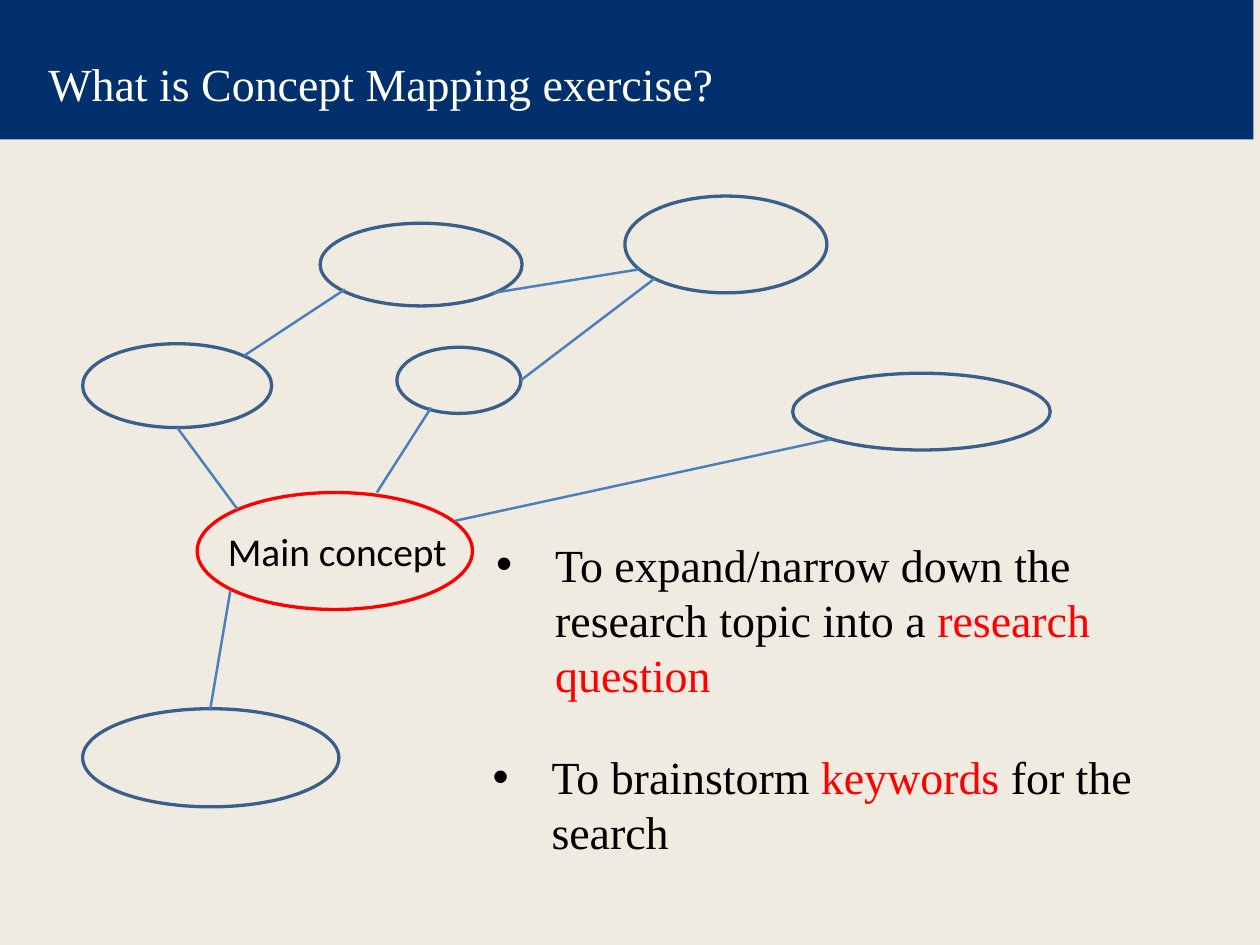
"""Build a slide that explains the concept mapping exercise."""
from dataclasses import dataclass

from lxml import etree
from pptx import Presentation
from pptx.dml.color import RGBColor
from pptx.enum.shapes import MSO_CONNECTOR, MSO_SHAPE
from pptx.enum.text import MSO_ANCHOR, MSO_AUTO_SIZE, PP_ALIGN
from pptx.oxml.ns import qn
from pptx.util import Pt

OVAL = MSO_SHAPE.OVAL
RECT = MSO_SHAPE.RECTANGLE
LINE = MSO_CONNECTOR.STRAIGHT
LEFT = PP_ALIGN.LEFT
TOP = MSO_ANCHOR.TOP
FIXED = MSO_AUTO_SIZE.NONE


@dataclass(frozen=True)
class Theme:
    paper: str = "EFEBE0"
    navy: str = "02306D"
    white: str = "FFFFFF"
    black: str = "000000"
    red: str = "FF0000"
    rim: str = "3A5F8C"
    link: str = "4B7EBC"
    serif: str = "Times New Roman"
    sans: str = "Calibri"
    big: float = 28
    label: float = 24
    indent: float = 36


THEME = Theme()

MAIN = (120.2, 300.2, 167.8, 71.3)
IDEAS = [
    (50.4, 209.5, 115.2, 51.1),
    (195.1, 136.1, 123.1, 50.4),
    (50.4, 432, 156.2, 59.8),
    (241.9, 211.7, 75.6, 40.3),
    (380.9, 119.5, 123.1, 59),
    (483.1, 227.5, 157, 46.8),
]
LINKS = [
    (108, 260.6, 144.7, 310.3),
    (210.2, 176.4, 149, 216.7),
    (140.4, 360, 128.2, 432),
    (262.8, 248.4, 229.7, 300.2),
    (389.5, 164.2, 300.2, 178.6),
    (398.9, 169.9, 317.5, 231.8),
    (506.2, 267.8, 277.2, 317.5),
]
POINTS = [
    ((302.4, 326.9, 442.8, 101.5),
     [("To expand/narrow down the research topic into a ", THEME.black),
      ("research question", THEME.red)]),
    ((300.2, 456.5, 426.2, 67.7),
     [("To brainstorm ", THEME.black),
      ("keywords", THEME.red),
      (" for the search", THEME.black)]),
]


def tint(code):
    """Turn a hex code into a colour."""
    return RGBColor.from_string(code)


def style(para, face, size, color=None):
    """Set the font of a paragraph."""
    para.font.name = face
    para.font.size = Pt(size)
    if color:
        para.font.color.rgb = tint(color)


def place(holder, box):
    """Move a placeholder, clear its insets and return its first paragraph."""
    holder.left, holder.top, holder.width, holder.height = map(Pt, box)
    frame = holder.text_frame
    frame.margin_left = frame.margin_right = 0
    frame.margin_top = frame.margin_bottom = 0
    frame.vertical_anchor = TOP
    frame.auto_size = FIXED
    frame.word_wrap = True
    para = frame.paragraphs[0]
    para.alignment = LEFT
    para.space_before = Pt(0)
    return para


def add_band(slide, box):
    """Put the navy band behind the title."""
    band = slide.shapes.add_shape(RECT, *map(Pt, box))
    band.shadow.inherit = False
    band.fill.solid()
    band.fill.fore_color.rgb = tint(THEME.navy)
    band.line.fill.background()
    slide.shapes.title.element.addprevious(band.element)


def add_title(slide, text, box):
    """Fill the title placeholder."""
    para = place(slide.shapes.title, box)
    para.text = text
    para.line_spacing = Pt(50.4)
    style(para, THEME.serif, THEME.big, THEME.white)


def add_point(holder, box, parts):
    """Write one bulleted point with coloured parts."""
    para = place(holder, box)
    para.line_spacing = Pt(33.6)
    style(para, THEME.serif, THEME.big)
    for text, color in parts:
        run = para.add_run()
        run.text = text
        run.font.color.rgb = tint(color)
    props = para.line_spacing and para._p.get_or_add_pPr()
    props.set("marL", str(Pt(THEME.indent)))
    props.set("indent", str(-Pt(THEME.indent)))
    mark = etree.Element(qn("a:buChar"), char="•")
    face = etree.Element(qn("a:buFont"), typeface="Arial")
    props.find(qn("a:defRPr")).addprevious(face)
    face.addnext(mark)


def add_oval(slide, box, color):
    """Draw an unfilled oval."""
    oval = slide.shapes.add_shape(OVAL, *map(Pt, box))
    oval.shadow.inherit = False
    oval.fill.background()
    oval.line.color.rgb = tint(color)
    oval.line.width = Pt(2)


def add_link(slide, ends):
    """Draw a line between two ovals."""
    link = slide.shapes.add_connector(LINE, *map(Pt, ends))
    link.line.color.rgb = tint(THEME.link)
    link.line.width = Pt(1.5)
    etree.SubElement(link.element.spPr, qn("a:effectLst"))


def add_label(slide, text, box):
    """Write the name of the main oval."""
    frame = slide.shapes.add_textbox(*map(Pt, box)).text_frame
    frame.word_wrap = True
    para = frame.paragraphs[0]
    para.text = text
    style(para, THEME.sans, THEME.label, THEME.black)


def main():
    """Build and save the slide."""
    deck = Presentation()
    deck.slide_width, deck.slide_height = Pt(768), Pt(576)
    slide = deck.slides.add_slide(deck.slide_layouts[3])
    slide.background.fill.solid()
    slide.background.fill.fore_color.rgb = tint(THEME.paper)
    add_band(slide, (0, 0, 763.9, 85))
    add_title(slide, "What is Concept Mapping exercise?",
              (29.5, 17.3, 720, 45.4))
    for spot, (box, parts) in enumerate(POINTS, 1):
        add_point(slide.placeholders[spot], box, parts)
    add_oval(slide, MAIN, THEME.red)
    add_label(slide, "Main concept", (131.8, 317.5, 167.8, 36))
    for box in IDEAS:
        add_oval(slide, box, THEME.rim)
    for ends in LINKS:
        add_link(slide, ends)
    deck.save("out.pptx")


if __name__ == "__main__":
    main()
